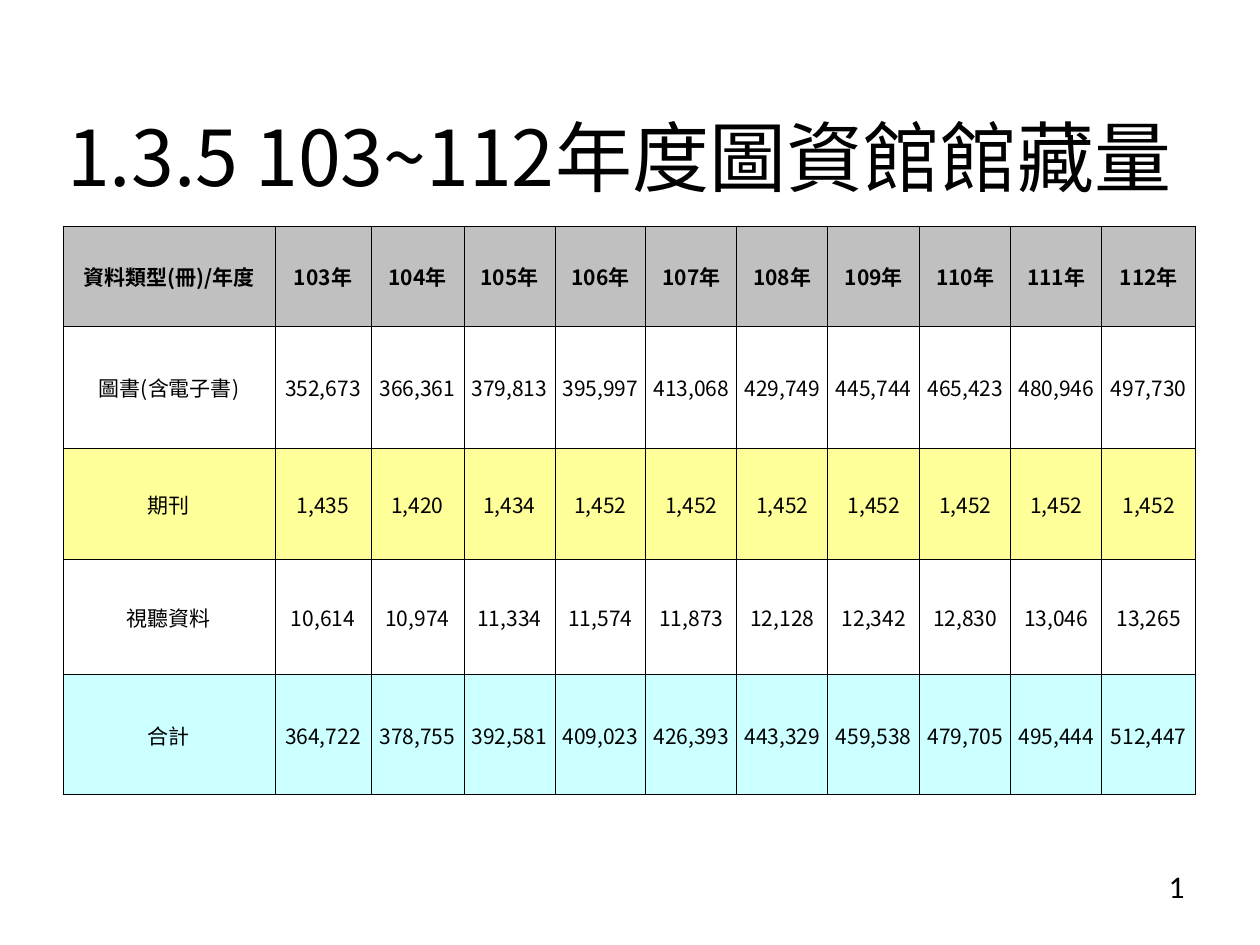
from lxml import etree
from pptx import Presentation
from pptx.dml.color import RGBColor
from pptx.enum.text import MSO_ANCHOR, PP_ALIGN
from pptx.oxml import parse_xml
from pptx.oxml.ns import nsdecls, qn
from pptx.util import Pt

PX = 914400 / 126
MIDDLE, TOP = MSO_ANCHOR.MIDDLE, MSO_ANCHOR.TOP
CENTER, RIGHT = PP_ALIGN.CENTER, PP_ALIGN.RIGHT
BLACK = RGBColor(0x00, 0x00, 0x00)
GRAY = RGBColor(0xC0, 0xC0, 0xC0)
YELLOW = RGBColor(0xFF, 0xFF, 0x99)
CYAN = RGBColor(0xCC, 0xFF, 0xFF)
SANS = "Noto Sans CJK SC"

COLS = [212, 96, 93, 91, 91, 91, 91, 92, 91, 91, 94]
ROWS = [
    (100, GRAY, ["資料類型(冊)/年度"] + [f"{year}年" for year in range(103, 113)]),
    (122, None, ["圖書(含電子書)", "352,673", "366,361", "379,813", "395,997", "413,068",
                 "429,749", "445,744", "465,423", "480,946", "497,730"]),
    (111, YELLOW, ["期刊", "1,435", "1,420", "1,434"] + ["1,452"] * 7),
    (115, None, ["視聽資料", "10,614", "10,974", "11,334", "11,574", "11,873",
                 "12,128", "12,342", "12,830", "13,046", "13,265"]),
    (121, CYAN, ["合計", "364,722", "378,755", "392,581", "409,023", "426,393",
                 "443,329", "459,538", "479,705", "495,444", "512,447"]),
]


def px(*values):
    """Turn pixel lengths into EMU."""
    return [round(value * PX) for value in values]


def write(frame, text, size, face, align, bold=False):
    """Put one run in the first paragraph, with one face for all scripts."""
    para = frame.paragraphs[0]
    para.alignment = align
    run = para.add_run()
    run.text = text
    run.font.size = Pt(size)
    run.font.bold = bold
    run.font.name = face
    run.font.color.rgb = BLACK
    etree.SubElement(run.font._element, qn("a:ea")).set("typeface", face)


prs = Presentation()
prs.slide_width, prs.slide_height = px(1260, 945)
slide = prs.slides.add_slide(prs.slide_layouts[6])

# Title and page number
for box, text, size, face, align, anchor in [
    ((34, 107, 1171, 98), "1.3.5 103~112年度圖資館館藏量", 44, SANS, CENTER, MIDDLE),
    ((903, 861, 294, 65), "1", 18, "Calibri", RIGHT, TOP),
]:
    frame = slide.shapes.add_textbox(*px(*box)).text_frame
    frame.word_wrap = True
    frame.vertical_anchor = anchor
    write(frame, text, size, face, align)

# Holdings table
width, height = sum(COLS), sum(row[0] for row in ROWS)
table = slide.shapes.add_table(
    len(ROWS), len(COLS), *px(63, 226, width, height)).table
table.first_row = table.horz_banding = False
for col, wide in zip(table.columns, COLS):
    col.width, = px(wide)

for r, (high, fill, texts) in enumerate(ROWS):
    table.rows[r].height, = px(high)
    for c, text in enumerate(texts):
        cell = table.cell(r, c)
        cell.vertical_anchor = MIDDLE
        cell.margin_left, cell.margin_right, cell.margin_top, cell.margin_bottom = px(1, 1, 1, 0)
        write(cell.text_frame, text, 12, SANS, CENTER, bold=r == 0)
        props = cell._tc.get_or_add_tcPr()
        for side in ("lnL", "lnR", "lnT", "lnB"):
            props.append(parse_xml(
                f'<a:{side} {nsdecls("a")} w="{Pt(0.5)}"><a:solidFill>'
                f'<a:srgbClr val="{BLACK}"/></a:solidFill></a:{side}>'))
        if fill is None:
            cell.fill.background()
        else:
            cell.fill.solid()
            cell.fill.fore_color.rgb = fill

prs.save("out.pptx")
